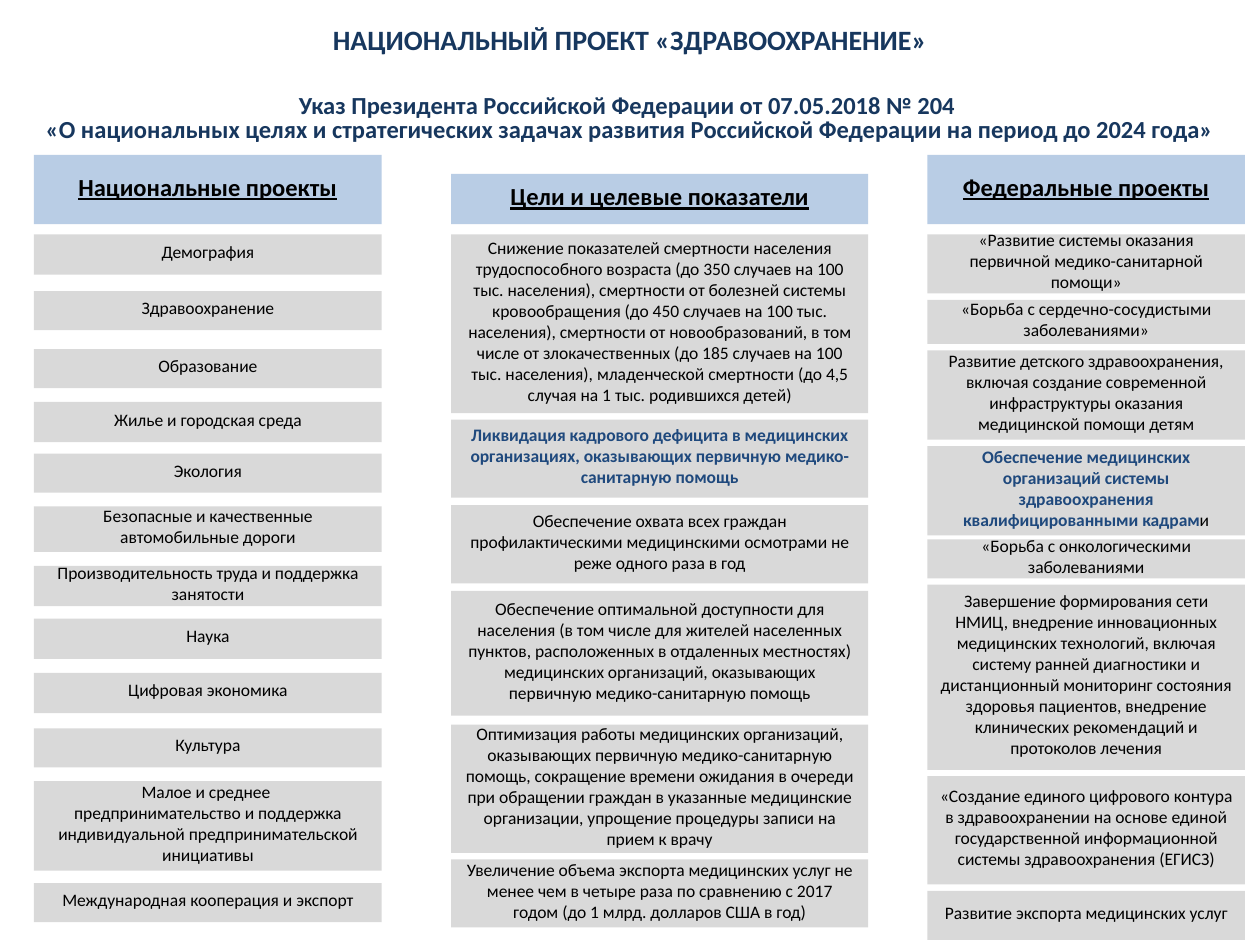
from collections import namedtuple

from pptx import Presentation
from pptx.dml.color import RGBColor
from pptx.enum.shapes import MSO_SHAPE
from pptx.enum.text import MSO_ANCHOR, MSO_AUTO_SIZE, PP_ALIGN
from pptx.util import Inches, Pt

RECTANGLE = MSO_SHAPE.RECTANGLE
CENTER = PP_ALIGN.CENTER
TOP, MIDDLE = MSO_ANCHOR.TOP, MSO_ANCHOR.MIDDLE
NO_AUTOFIT = MSO_AUTO_SIZE.NONE

FONT = "Calibri"
NAVY, ACCENT, BLACK = "17375E", "1F497D", "000000"
HEADER_FILL, ROW_FILL = "B9CDE5", "D9D9D9"
HEADER_BOTTOM = 1.78
TITLE_ONLY = 5

# A row shows its accent text first, then its plain text
Row = namedtuple("Row", "top height text accent", defaults=("", ""))
Column = namedtuple("Column", "left width header_top header rows")

COLUMNS = [
    Column(0.27, 2.76, 1.23, "Национальные проекты", [
        Row(1.86, 0.32, "Демография"),
        Row(2.31, 0.31, "Здравоохранение"),
        Row(2.77, 0.31, "Образование"),
        Row(3.19, 0.32, "Жилье и городская среда"),
        Row(3.60, 0.31, "Экология"),
        Row(4.02, 0.36, "Безопасные и качественные автомобильные дороги"),
        Row(4.49, 0.32, "Производительность труда и поддержка занятости"),
        Row(4.91, 0.32, "Наука"),
        Row(5.34, 0.32, "Цифровая экономика"),
        Row(5.78, 0.31, "Культура"),
        Row(6.20, 0.71, "Малое и среднее \nпредпринимательство и поддержка "
            "индивидуальной предпринимательской инициативы"),
        Row(7.01, 0.31, "Международная кооперация и экспорт"),
    ]),
    Column(3.58, 3.31, 1.38, "Цели и целевые показатели", [
        Row(1.86, 1.42, "Снижение показателей смертности населения "
            "трудоспособного возраста (до 350 случаев на 100 тыс. населения), "
            "смертности от болезней системы кровообращения (до 450 случаев на "
            "100 тыс. населения), смертности от новообразований, в том числе "
            "от злокачественных (до 185 случаев на 100 тыс. населения), "
            "младенческой смертности (до 4,5 случая на 1 тыс. родившихся детей)"),
        Row(3.33, 0.62, accent="Ликвидация кадрового дефицита в медицинских "
            "организациях, оказывающих первичную медико-санитарную помощь"),
        Row(4.01, 0.62, "Обеспечение охвата всех граждан профилактическими "
            "медицинскими осмотрами не реже одного раза в год"),
        Row(4.69, 0.99, "Обеспечение оптимальной доступности для населения "
            "(в том числе для жителей населенных пунктов, расположенных в "
            "отдаленных местностях) медицинских организаций, оказывающих "
            "первичную медико-санитарную помощь"),
        Row(5.75, 1.02, "Оптимизация работы медицинских организаций, "
            "оказывающих первичную медико-санитарную помощь, сокращение "
            "времени ожидания в очереди при обращении граждан в указанные "
            "медицинские организации, упрощение процедуры записи на прием к врачу"),
        Row(6.82, 0.54, "Увеличение объема экспорта медицинских услуг не менее "
            "чем в четыре раза по сравнению с 2017 годом (до 1 млрд. долларов "
            "США в год)"),
    ]),
    Column(7.36, 2.52, 1.23, "Федеральные проекты", [
        Row(1.86, 0.47, "«Развитие системы оказания первичной "
            "медико-санитарной помощи»"),
        Row(2.38, 0.35, "«Борьба с сердечно-сосудистыми заболеваниями»"),
        Row(2.78, 0.71, "Развитие детского здравоохранения, включая создание "
            "современной инфраструктуры оказания медицинской помощи детям"),
        Row(3.54, 0.71, "и", "Обеспечение медицинских организаций системы "
            "здравоохранения квалифицированными кадрам"),
        Row(4.28, 0.31, "«Борьба с онкологическими заболеваниями"),
        Row(4.64, 1.47, "Завершение формирования сети НМИЦ, внедрение "
            "инновационных медицинских технологий, включая систему ранней "
            "диагностики и дистанционный мониторинг состояния здоровья "
            "пациентов, внедрение клинических рекомендаций и протоколов лечения"),
        Row(6.16, 0.86, "«Создание единого цифрового контура в здравоохранении "
            "на основе единой государственной информационной системы "
            "здравоохранения (ЕГИСЗ)"),
        Row(7.07, 0.39, "Развитие экспорта медицинских услуг"),
    ]),
]


def color(value):
    return RGBColor.from_string(value)


def add_span(para, text, size, ink, bold=False, underline=False):
    span = para.add_run()
    span.text = text
    font = span.font
    font.name, font.size = FONT, Pt(size)
    font.bold, font.underline = bold, underline
    font.color.rgb = color(ink)


def centered_paragraphs(frame, count, spacing=None):
    """Return the given number of centred paragraphs of a text frame."""
    while len(frame.paragraphs) < count:
        frame.add_paragraph()
    for para in frame.paragraphs:
        para.alignment = CENTER
        if spacing:
            para.line_spacing = spacing
    return frame.paragraphs


def fill_heading(box, lines, size):
    frame = box.text_frame
    frame.word_wrap = True
    frame.auto_size = NO_AUTOFIT
    frame.vertical_anchor = TOP
    for para, line in zip(centered_paragraphs(frame, len(lines), 0.8), lines):
        para.space_before = Pt(0)
        add_span(para, line, size, NAVY, bold=True)


def add_title(page, text):
    title = page.shapes.title
    title.left, title.top = Inches(-0.12), Inches(0.18)
    title.width, title.height = Inches(10.24), Inches(0.32)
    fill_heading(title, [text], 16)


def add_subtitle(page, lines):
    box = page.shapes.add_textbox(Inches(-0.04), Inches(0.71),
                                  Inches(10.08), Inches(0.48))
    fill_heading(box, lines, 14)


def add_panel(page, left, top, width, height, fill):
    """Add a plain filled rectangle and return its text frame."""
    panel = page.shapes.add_shape(RECTANGLE, Inches(left), Inches(top),
                                  Inches(width), Inches(height))
    panel.shadow.inherit = False
    panel.fill.solid()
    panel.fill.fore_color.rgb = color(fill)
    panel.line.fill.background()
    frame = panel.text_frame
    frame.word_wrap = True
    frame.vertical_anchor = MIDDLE
    frame.margin_left = frame.margin_right = Inches(0.1)
    frame.margin_top, frame.margin_bottom = 0, Inches(0.05)
    return frame


def add_column(page, column):
    # Headers share one bottom edge
    header = add_panel(page, column.left, column.header_top, column.width,
                       HEADER_BOTTOM - column.header_top, HEADER_FILL)
    add_span(centered_paragraphs(header, 1)[0], column.header, 14, BLACK,
             bold=True, underline=True)

    for row in column.rows:
        frame = add_panel(page, column.left, row.top, column.width,
                          row.height, ROW_FILL)
        lines = row.text.split("\n")
        paras = centered_paragraphs(frame, len(lines))
        if row.accent:
            add_span(paras[0], row.accent, 10, ACCENT, bold=True)
        for para, line in zip(paras, lines):
            if line:
                add_span(para, line, 10, BLACK)


def main():
    deck = Presentation()
    deck.slide_width, deck.slide_height = Inches(10), Inches(7.5)
    page = deck.slides.add_slide(deck.slide_layouts[TITLE_ONLY])

    add_title(page, "НАЦИОНАЛЬНЫЙ ПРОЕКТ «ЗДРАВООХРАНЕНИЕ»")
    add_subtitle(page, [
        "Указ Президента Российской Федерации от 07.05.2018 № 204 ",
        "«О национальных целях и стратегических задачах развития "
        "Российской Федерации на период до 2024 года»",
    ])
    for column in COLUMNS:
        add_column(page, column)

    deck.save("out.pptx")


if __name__ == "__main__":
    main()
